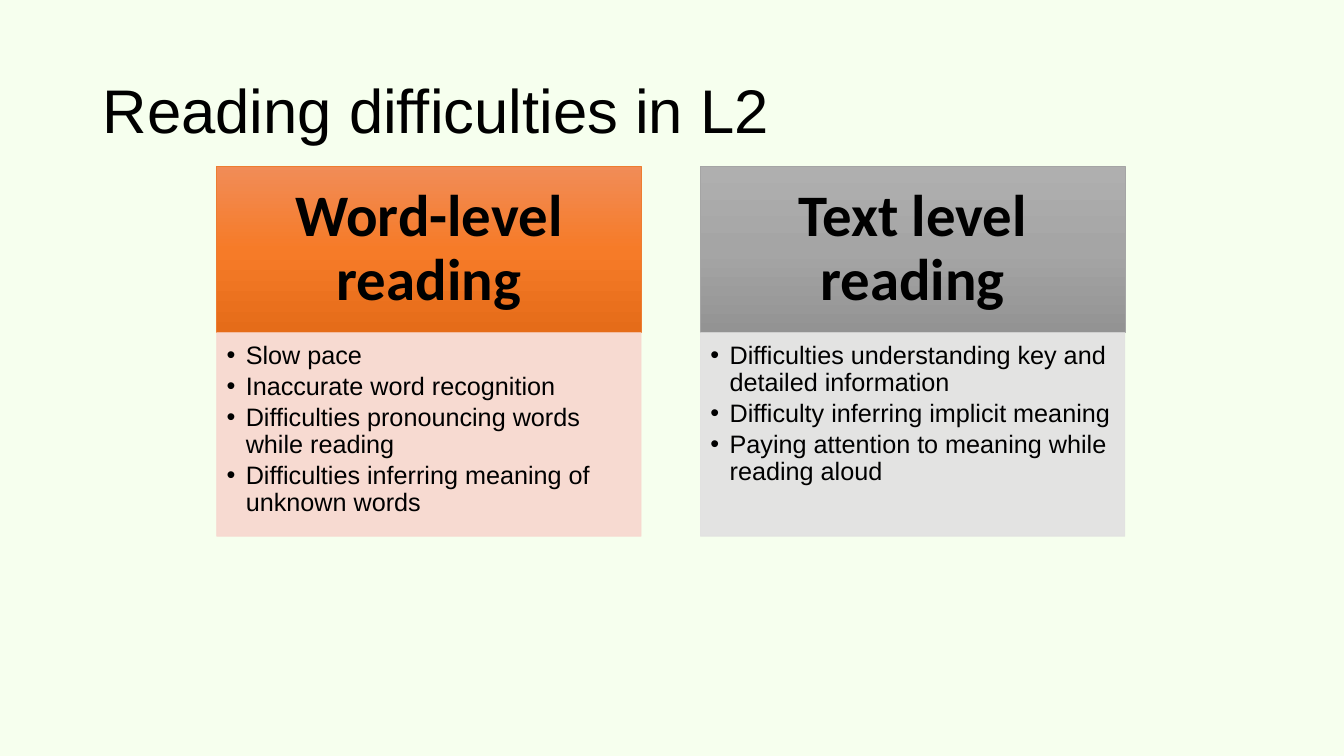
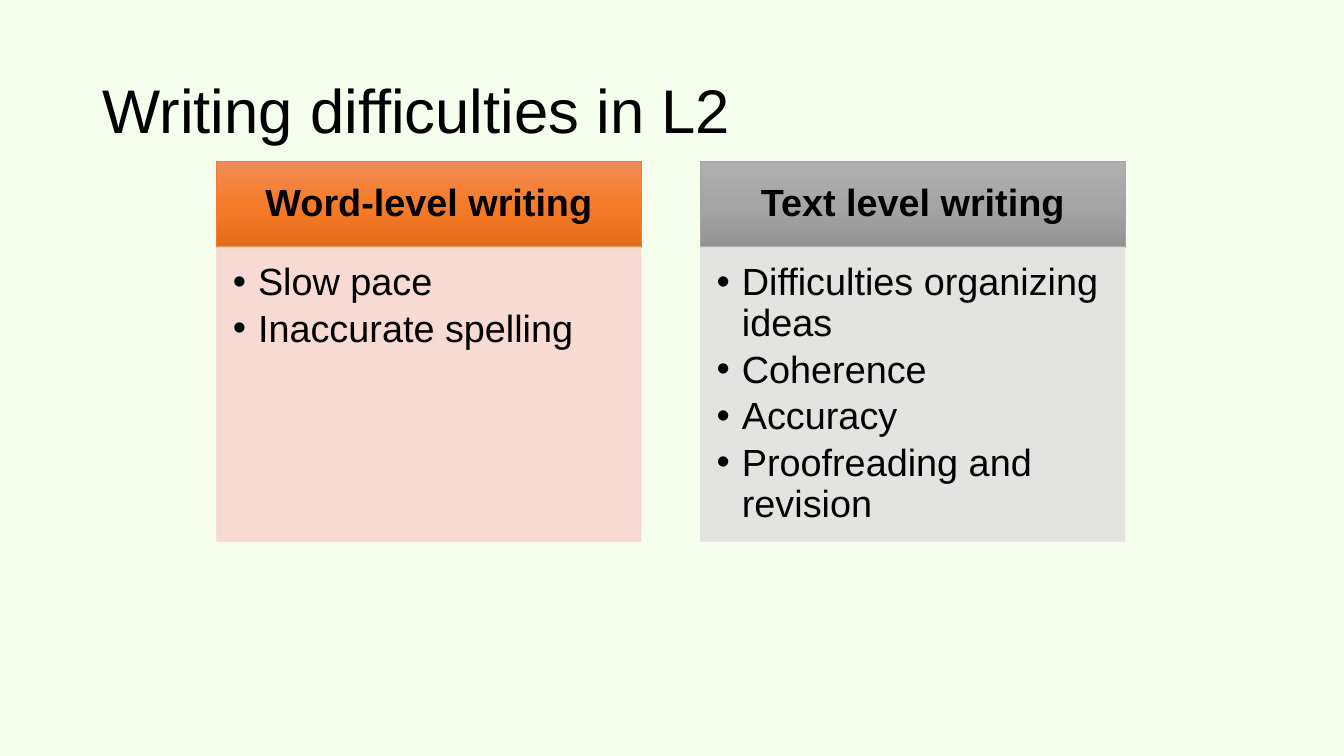
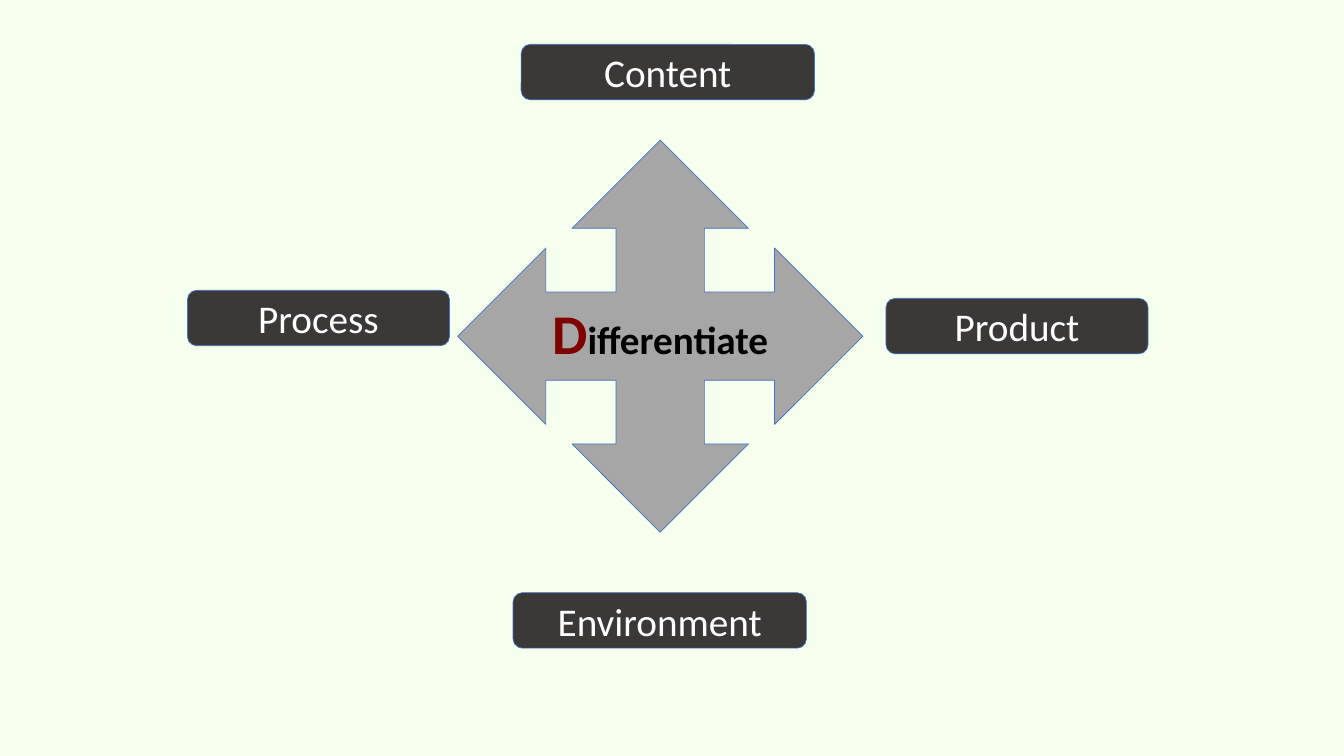
"""Three slides on reading and writing difficulties in L2 and on differentiation."""
from copy import deepcopy

from lxml.etree import SubElement
from pptx import Presentation
from pptx.dml.color import RGBColor
from pptx.enum.shapes import MSO_SHAPE
from pptx.enum.text import MSO_ANCHOR, PP_ALIGN
from pptx.oxml.ns import qn
from pptx.util import Pt

PX = 9144
BLACK, WHITE = "000000", "FFFFFF"
MINT, DARK, BLUE = "F6FFEE", "3B3838", "4472C4"
GREY, RED = "A6A6A6", "800000"
TITLE = (92, 40, 1150, 145)
LEFT, WIDE, STEP = 215, 421, 480
THEMES = [
    (["F18C57", "F67B28", "E56C19"], "ED7D31", "F8D7CE"),
    (["AFAFAF", "A5A5A5", "939393"], "A5A5A5", "E1E1E1"),
]
MIDDLE = {"alignment": PP_ALIGN.CENTER}
TIGHT = {"line_spacing": 0.9}


def hue(code):
    return RGBColor.from_string(code)


def put(slide, kind, spot, lines, font, form, ink=BLACK, fill=None, edge=None,
        pads=(10, 5, 10, 5), anchor=MSO_ANCHOR.MIDDLE):
    place = [n * PX for n in spot]
    if kind is None:
        shape = slide.shapes.add_textbox(*place)
    else:
        shape = slide.shapes.add_shape(kind, *place)
        shape.shadow.inherit = False
        shape.line.color.rgb = hue(edge)
        shape.line.width = Pt(0.5)
    if fill:
        shape.fill.solid()
        shape.fill.fore_color.rgb = hue(fill)
    frame = shape.text_frame
    frame.word_wrap = True
    frame.vertical_anchor = anchor
    for side, pad in zip(("left", "top", "right", "bottom"), pads):
        setattr(frame, f"margin_{side}", pad * PX)
    frame.text = "\n".join(lines)
    for para in frame.paragraphs:
        for name, value in form.items():
            setattr(para, name, value)
        for run in para.runs:
            run.font.color.rgb = hue(ink)
            for name, value in font.items():
                setattr(run.font, name, value)
    return shape


deck = Presentation()
deck.slide_width, deck.slide_height = 12192000, 750 * PX
back = deck.slide_master.background.fill
back.solid()
back.fore_color.rgb = hue(MINT)
blank = deck.slide_layouts[6]

topics = [
    {
        "title": "Reading difficulties in L2",
        "top": 165, "head": 165, "body": 202,
        "font": {"name": "Calibri", "size": Pt(42), "bold": True},
        "pads": (33, 19, 33, 19),
        "size": 18, "inset": (10, 10, 14, 16), "hang": 19,
        "cards": [
            ("Word-level reading", [
                "Slow pace",
                "Inaccurate word recognition",
                "Difficulties pronouncing words while reading",
                "Difficulties inferring meaning of unknown words",
            ]),
            ("Text level reading", [
                "Difficulties understanding key and detailed information",
                "Difficulty inferring implicit meaning",
                "Paying attention to meaning while reading aloud",
            ]),
        ],
    },
    {
        "title": "Writing difficulties in L2",
        "top": 160, "head": 85, "body": 292,
        "font": {"name": "Arial", "size": Pt(27), "bold": True},
        "pads": (21, 12, 21, 12),
        "size": 27, "inset": (16, 16, 21, 24), "hang": 25,
        "cards": [
            ("Word-level writing", ["Slow pace", "Inaccurate spelling"]),
            ("Text level writing", [
                "Difficulties organizing ideas",
                "Coherence",
                "Accuracy",
                "Proofreading and revision",
            ]),
        ],
    },
]

for topic in topics:
    slide = deck.slides.add_slide(blank)
    put(slide, None, TITLE, [topic["title"]],
        {"name": "Arial", "size": Pt(44)}, TIGHT)
    top, high = topic["top"], topic["head"]
    for col, (card, theme) in enumerate(zip(topic["cards"], THEMES)):
        name, points = card
        shades, edge, pale = theme
        left = LEFT + col * STEP

        head = put(slide, MSO_SHAPE.RECTANGLE, (left, top, WIDE, high), [name],
                   topic["font"], MIDDLE | TIGHT, edge=edge, pads=topic["pads"])
        head.fill.gradient()
        head.fill.gradient_angle = 270
        stops = head.element.spPr.find(".//" + qn("a:gsLst"))
        stops.insert(1, deepcopy(stops[0]))
        for stop, shade, part in zip(head.fill.gradient_stops, shades, (0, 0.5, 1)):
            stop.color.rgb = hue(shade)
            stop.position = part

        size = topic["size"]
        form = {"alignment": PP_ALIGN.LEFT, "space_after": Pt(size * 0.15)} | TIGHT
        body = put(slide, MSO_SHAPE.RECTANGLE,
                   (left, top + high, WIDE, topic["body"]), points,
                   {"name": "Arial", "size": Pt(size)}, form, fill=pale, edge=pale,
                   pads=topic["inset"], anchor=MSO_ANCHOR.TOP)
        for tint in body.element.spPr.iter(qn("a:srgbClr")):
            SubElement(tint, qn("a:alpha"), val="90000")
        hang = topic["hang"] * PX
        for para in body.text_frame.paragraphs:
            props = para._p.get_or_add_pPr()
            props.set("marL", str(hang))
            props.set("indent", str(-hang))
            SubElement(props, qn("a:buFont"), typeface="Arial")
            SubElement(props, qn("a:buChar"), char="•")

slide = deck.slides.add_slide(blank)
bold = {"name": "Calibri", "size": Pt(40), "bold": True}
arrow = put(slide, MSO_SHAPE.QUAD_ARROW, (454, 139, 402, 389), ["D"], bold,
            MIDDLE | TIGHT | {"space_before": Pt(10)}, ink=RED, fill=GREY, edge=BLUE)
rest = arrow.text_frame.paragraphs[0].add_run()
rest.text = "ifferentiate"
rest.font.color.rgb = hue(BLACK)
for name, value in (bold | {"size": Pt(28)}).items():
    setattr(rest.font, name, value)

labels = [
    ("Content", 517, 44, 291),
    ("Environment", 509, 588, 291),
    ("Process", 186, 288, 260),
    ("Product", 879, 296, 260),
]
for word, left, top, wide in labels:
    put(slide, MSO_SHAPE.ROUNDED_RECTANGLE, (left, top, wide, 55), [word],
        {"name": "Calibri", "size": Pt(28)}, MIDDLE, ink=WHITE, fill=DARK, edge=BLUE)

deck.save("out.pptx")
